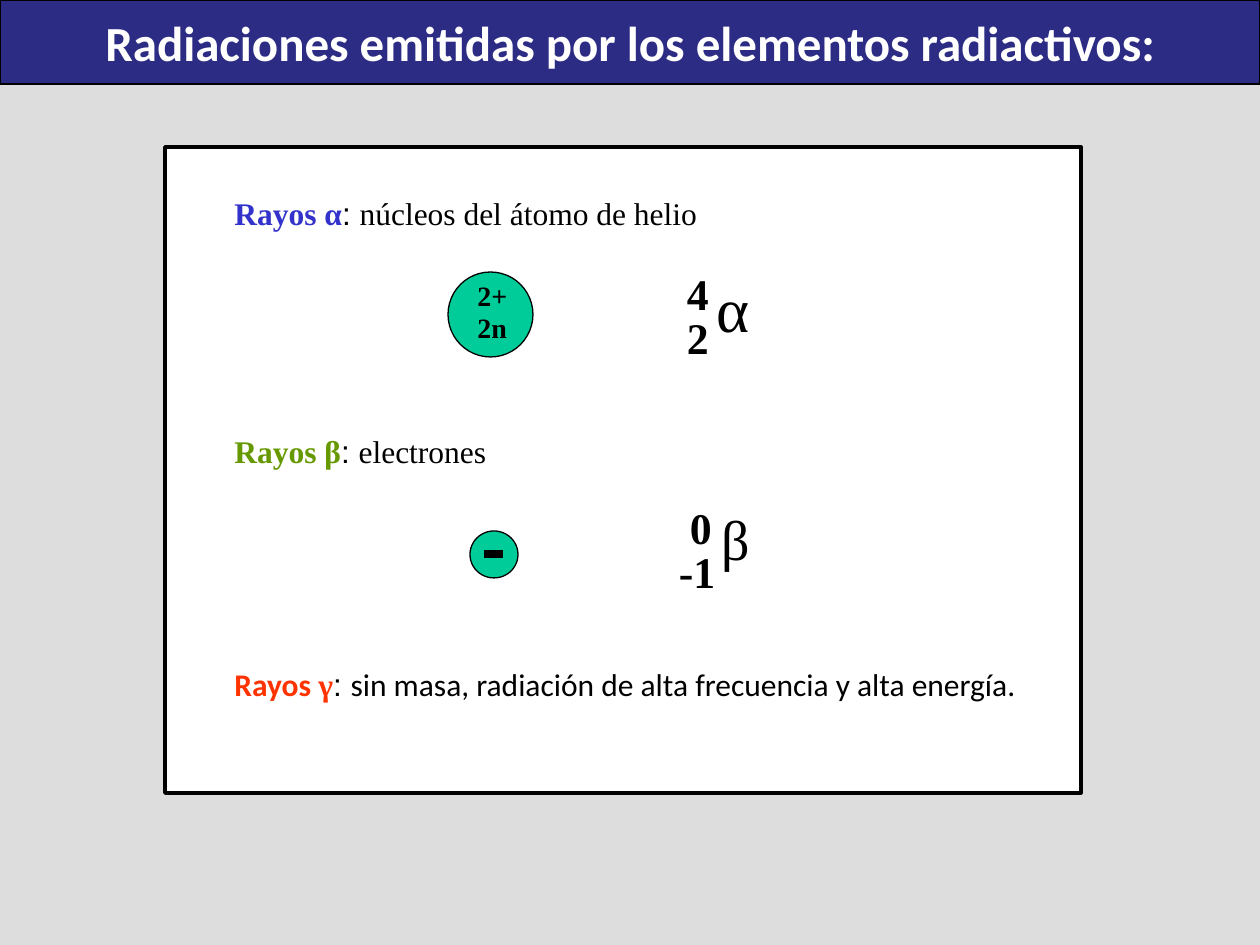
from lxml.etree import SubElement
from pptx import Presentation
from pptx.dml.color import RGBColor
from pptx.enum.shapes import MSO_CONNECTOR, MSO_SHAPE
from pptx.enum.text import MSO_ANCHOR, MSO_AUTO_SIZE, PP_ALIGN
from pptx.oxml.ns import qn
from pptx.util import Pt

PX = 914400 / 126  # EMU in one px

BLACK = RGBColor(0x00, 0x00, 0x00)
WHITE = RGBColor(0xFF, 0xFF, 0xFF)
GREY = RGBColor(0xDD, 0xDD, 0xDD)
NAVY = RGBColor(0x2C, 0x2C, 0x84)
BLUE = RGBColor(0x33, 0x33, 0xCC)
GREEN = RGBColor(0x66, 0x99, 0x00)
RED = RGBColor(0xFF, 0x33, 0x00)
MINT = RGBColor(0x00, 0xCC, 0x99)

SERIF, SANS, CALIBRI = "Times New Roman", "Arial", "Calibri"


def style(font, size, color=BLACK, bold=False):
    return {"name": font, "size": Pt(size), "color": color, "bold": bold}


# Content: each run is (text, style)
TITLE = [("Radiaciones emitidas por los elementos radiactivos:",
          style(CALIBRI, 28, WHITE, True))]
COLON = (": ", style(SANS, 18))
RAYS = [
    ((222, 188, 536, 50), [("Rayos α", style(SERIF, 18, BLUE, True)), COLON,
                           ("núcleos del átomo de helio", style(SERIF, 18))]),
    ((222, 426, 281, 50), [("Rayos β", style(SERIF, 18, GREEN, True)), COLON,
                           ("electrones", style(SERIF, 18))]),
    ((222, 659, 840, 50), [("Rayos ", style(CALIBRI, 18, RED, True)),
                           ("γ", style(SERIF, 18, RED, True)), COLON,
                           ("sin masa, radiación de alta frecuencia y alta energía.",
                            style(CALIBRI, 18))]),
]
PARTICLES = [(448, 272, 85, 85), (470, 531, 48, 47)]
HELIUM = ["2+", "2n"]
NUMBER = style(SERIF, 25, bold=True)
SPACE = (" ", style(SANS, 18))
NUCLIDES = [
    [((716, 270, 42, 76), [("α", style(SERIF, 36)), SPACE]),
     ((687, 267, 21, 53), [("4", NUMBER)]),
     ((687, 311, 21, 53), [("2", NUMBER)])],
    [((708, 504, 52, 67), [(" β", style(SERIF, 32)), SPACE]),
     ((679, 501, 33, 53), [(" 0", NUMBER)]),
     ((679, 545, 37, 53), [("-1", NUMBER)])],
]


def emu(box):
    return [round(v * PX) for v in box]


def write(paragraph, runs):
    for text, look in runs:
        run = paragraph.add_run()
        run.text = text
        for key, value in look.items():
            if key == "color":
                run.font.color.rgb = value
            else:
                setattr(run.font, key, value)


def set_frame(frame, **settings):
    for key, value in settings.items():
        setattr(frame, key, value)


def paint(shape, fill, line=None, width=0.75):
    shape.fill.solid()
    shape.fill.fore_color.rgb = fill
    if line is None:
        shape.line.fill.background()
    else:
        shape.line.color.rgb = line
        shape.line.width = Pt(width)


def add_shape(slide, kind, box, fill, line=None, width=0.75):
    shape = slide.shapes.add_shape(kind, *emu(box))
    shape.shadow.inherit = False
    paint(shape, fill, line, width)
    return shape


def main():
    prs = Presentation()
    prs.slide_width, prs.slide_height = emu((1260, 945))
    slide = prs.slides.add_slide(prs.slide_layouts[5])
    slide.background.fill.solid()
    slide.background.fill.fore_color.rgb = GREY

    # Title band
    title = slide.shapes.title
    title.left, title.top, title.width, title.height = emu((0, 0, 1260, 84))
    paint(title, NAVY, BLACK)
    set_frame(title.text_frame, word_wrap=False, auto_size=MSO_AUTO_SIZE.NONE,
              vertical_anchor=MSO_ANCHOR.MIDDLE)
    heading = title.text_frame.paragraphs[0]
    heading.alignment = PP_ALIGN.CENTER
    write(heading, TITLE)

    # White panel and the three kinds of rays
    add_shape(slide, MSO_SHAPE.RECTANGLE, (165, 147, 916, 646), WHITE, BLACK, 2)
    for box, runs in RAYS:
        ray = add_shape(slide, MSO_SHAPE.RECTANGLE, box, WHITE)
        set_frame(ray.text_frame, word_wrap=True, vertical_anchor=MSO_ANCHOR.TOP,
                  auto_size=MSO_AUTO_SIZE.SHAPE_TO_FIT_TEXT)
        ray.text_frame.paragraphs[0].alignment = PP_ALIGN.LEFT
        write(ray.text_frame.paragraphs[0], runs)

    # Helium nucleus and electron
    for box in PARTICLES:
        add_shape(slide, MSO_SHAPE.OVAL, box, MINT, BLACK)
    helium = slide.shapes.add_textbox(*emu((465, 272, 77, 77))).text_frame
    helium.word_wrap = True
    for i, text in enumerate(HELIUM):
        paragraph = helium.add_paragraph() if i else helium.paragraphs[0]
        write(paragraph, [(text, style(SERIF, 16, bold=True))])
    paragraph.line_spacing = 0.4
    paragraph.space_before = Pt(9)
    minus = slide.shapes.add_connector(MSO_CONNECTOR.STRAIGHT, *emu((484, 554, 503, 554)))
    minus.line.color.rgb = BLACK
    minus.line.width = Pt(4.5)
    SubElement(minus.element.spPr, qn("a:effectLst"))

    # Nuclide symbols with mass and atomic numbers
    for parts in NUCLIDES:
        nuclide = slide.shapes.add_group_shape()
        for box, runs in parts:
            frame = nuclide.shapes.add_textbox(*emu(box)).text_frame
            set_frame(frame, word_wrap=False, auto_size=MSO_AUTO_SIZE.SHAPE_TO_FIT_TEXT,
                      margin_left=0, margin_top=0, margin_right=0, margin_bottom=0)
            write(frame.paragraphs[0], runs)

    prs.save("out.pptx")


if __name__ == "__main__":
    main()
